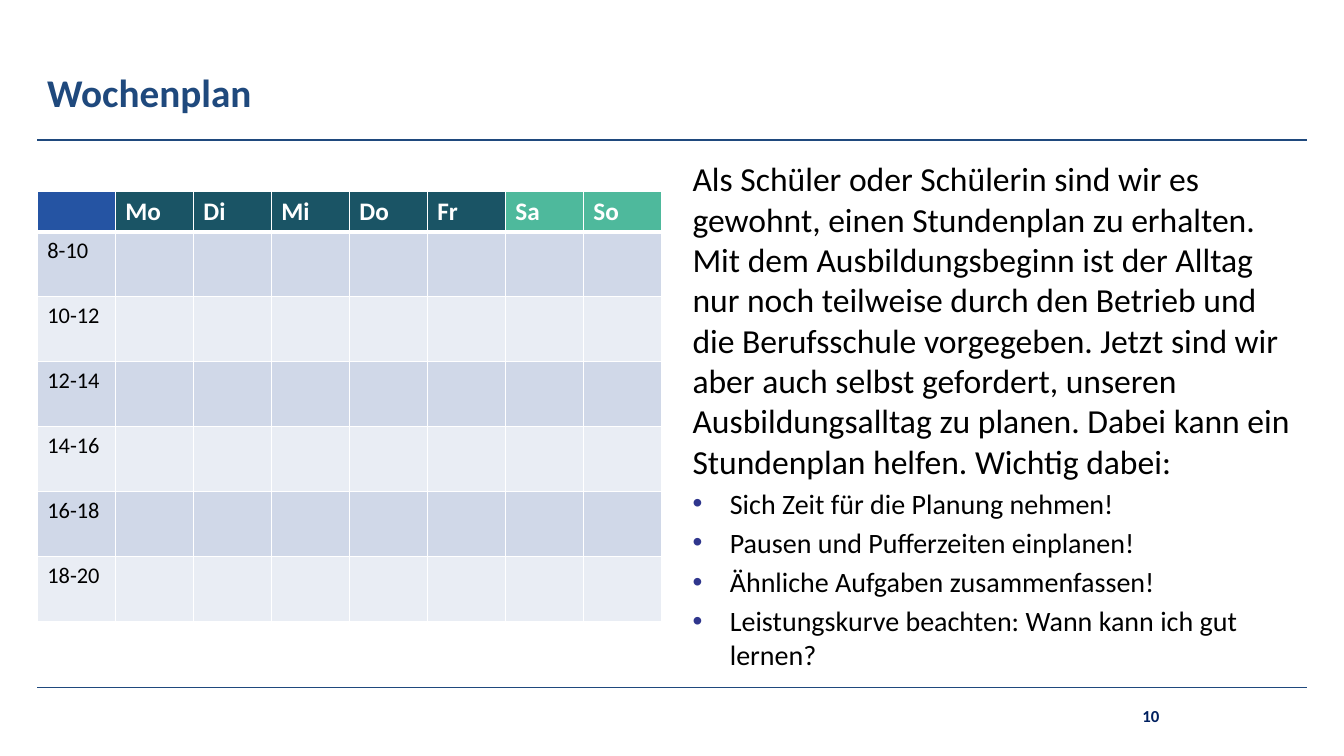
from dataclasses import dataclass

from lxml import etree
from pptx import Presentation
from pptx.dml.color import RGBColor
from pptx.enum.shapes import MSO_CONNECTOR
from pptx.enum.text import MSO_ANCHOR, PP_ALIGN
from pptx.oxml.ns import qn
from pptx.util import Inches, Pt

STRAIGHT = MSO_CONNECTOR.STRAIGHT
TOP, MIDDLE = MSO_ANCHOR.TOP, MSO_ANCHOR.MIDDLE
LEFT, CENTER = PP_ALIGN.LEFT, PP_ALIGN.CENTER


@dataclass(frozen=True)
class Theme:
    font: str = "Calibri"
    navy: str = "1F497D"
    number: str = "002060"
    text: str = "000000"
    white: str = "FFFFFF"
    bullet: str = "2F368D"
    corner: str = "2554A3"
    weekday: str = "1A5465"
    weekend: str = "4EB99C"
    bands: tuple = ("D0D8E8", "E9EDF4")
    title_size: int = 28
    body_size: int = 24
    bullet_size: int = 20
    header_size: int = 18
    time_size: int = 16
    number_size: int = 12


THEME = Theme()
MARGIN, RIGHT_EDGE = 0.37, 12.96
DAYS = ["Mo", "Di", "Mi", "Do", "Fr", "Sa", "So"]
TIMES = [f"{hour}-{hour + 2}" for hour in range(8, 20, 2)]
INTRO = (
    "Als Schüler oder Schülerin sind wir es gewohnt, einen Stundenplan zu erhalten. "
    "Mit dem Ausbildungsbeginn ist der Alltag nur noch teilweise durch den Betrieb und "
    "die Berufsschule vorgegeben. Jetzt sind wir aber auch selbst gefordert, unseren "
    "Ausbildungsalltag zu planen. Dabei kann ein Stundenplan helfen. Wichtig dabei:"
)
TIPS = [
    "Sich Zeit für die Planung nehmen!",
    "Pausen und Pufferzeiten einplanen!",
    "Ähnliche Aufgaben zusammenfassen!",
    "Leistungskurve beachten: Wann kann ich gut lernen?",
]


def style(para, size, color, bold=False):
    para.font.name = THEME.font
    para.font.size = Pt(size)
    para.font.bold = bold
    para.font.color.rgb = RGBColor.from_string(color)


def add_rule(page, top, width):
    rule = page.shapes.add_connector(
        STRAIGHT, Inches(MARGIN), Inches(top), Inches(RIGHT_EDGE), Inches(top)
    )
    rule.line.color.rgb = RGBColor.from_string(THEME.navy)
    rule.line.width = Pt(width)
    etree.SubElement(rule._element.spPr, qn("a:effectLst"))


def add_text(page, area, text, size, color, bold=False, anchor=MIDDLE, align=LEFT):
    box = page.shapes.add_textbox(*(Inches(length) for length in area))
    frame = box.text_frame
    frame.word_wrap = True
    frame.vertical_anchor = anchor
    frame.text = text
    para = frame.paragraphs[0]
    para.alignment = align
    style(para, size, color, bold)
    return frame


def add_bullet(frame, text):
    para = frame.add_paragraph()
    para.text = text
    para.space_before = Pt(0.2 * THEME.bullet_size)
    properties = para._p.get_or_add_pPr()
    properties.set("marL", str(Inches(0.37)))
    properties.set("indent", str(-Inches(0.37)))
    color = etree.SubElement(properties, qn("a:buClr"))
    etree.SubElement(color, qn("a:srgbClr"), val=THEME.bullet)
    etree.SubElement(properties, qn("a:buFont"), typeface="Arial")
    etree.SubElement(properties, qn("a:buChar"), char="•")
    style(para, THEME.bullet_size, THEME.text)


def set_borders(cell, bottom_width):
    properties = cell._tc.get_or_add_tcPr()
    widths = {"a:lnL": 1, "a:lnR": 1, "a:lnT": 1, "a:lnB": bottom_width}
    for position, (side, width) in enumerate(widths.items()):
        line = etree.Element(qn(side), w=str(Pt(width)))
        fill = etree.SubElement(line, qn("a:solidFill"))
        etree.SubElement(fill, qn("a:srgbClr"), val=THEME.white)
        properties.insert(position, line)


def cell_fill(row, column):
    if row:
        return THEME.bands[(row - 1) % 2]
    if column == 0:
        return THEME.corner
    return THEME.weekday if column <= 5 else THEME.weekend


def add_week_table(page):
    header_height, body_height = 0.4, 3.87 / len(TIMES)
    rows = [["", *DAYS]] + [[time] + [""] * len(DAYS) for time in TIMES]
    table = page.shapes.add_table(
        len(rows), len(rows[0]), Inches(MARGIN), Inches(1.9), Inches(6.19), Inches(4.27)
    ).table
    for row, labels in enumerate(rows):
        table.rows[row].height = Inches(body_height if row else header_height)
        for column, label in enumerate(labels):
            cell = table.cell(row, column)
            cell.text = label
            cell.fill.solid()
            cell.fill.fore_color.rgb = RGBColor.from_string(cell_fill(row, column))
            set_borders(cell, 1 if row else 3)
            para = cell.text_frame.paragraphs[0]
            if row:
                style(para, THEME.time_size, THEME.text)
            else:
                style(para, THEME.header_size, THEME.white, True)


def main():
    deck = Presentation()
    deck.slide_width, deck.slide_height = Inches(13.33), Inches(7.5)
    page = deck.slides.add_slide(deck.slide_layouts[6])
    add_rule(page, 1.39, 1.5)
    add_rule(page, 6.82, 1)
    add_text(page, (9.86, 6.9, 3.11, 0.4), "10", THEME.number_size, THEME.number,
             bold=True, align=CENTER)
    add_week_table(page)
    advice = add_text(page, (6.77, 1.52, 6.19, 5.25), INTRO, THEME.body_size,
                      THEME.text, anchor=TOP)
    for tip in TIPS:
        add_bullet(advice, tip)
    add_text(page, (MARGIN, 0.48, 9.54, 0.87), "Wochenplan", THEME.title_size,
             THEME.navy, bold=True)
    deck.save("out.pptx")


if __name__ == "__main__":
    main()
